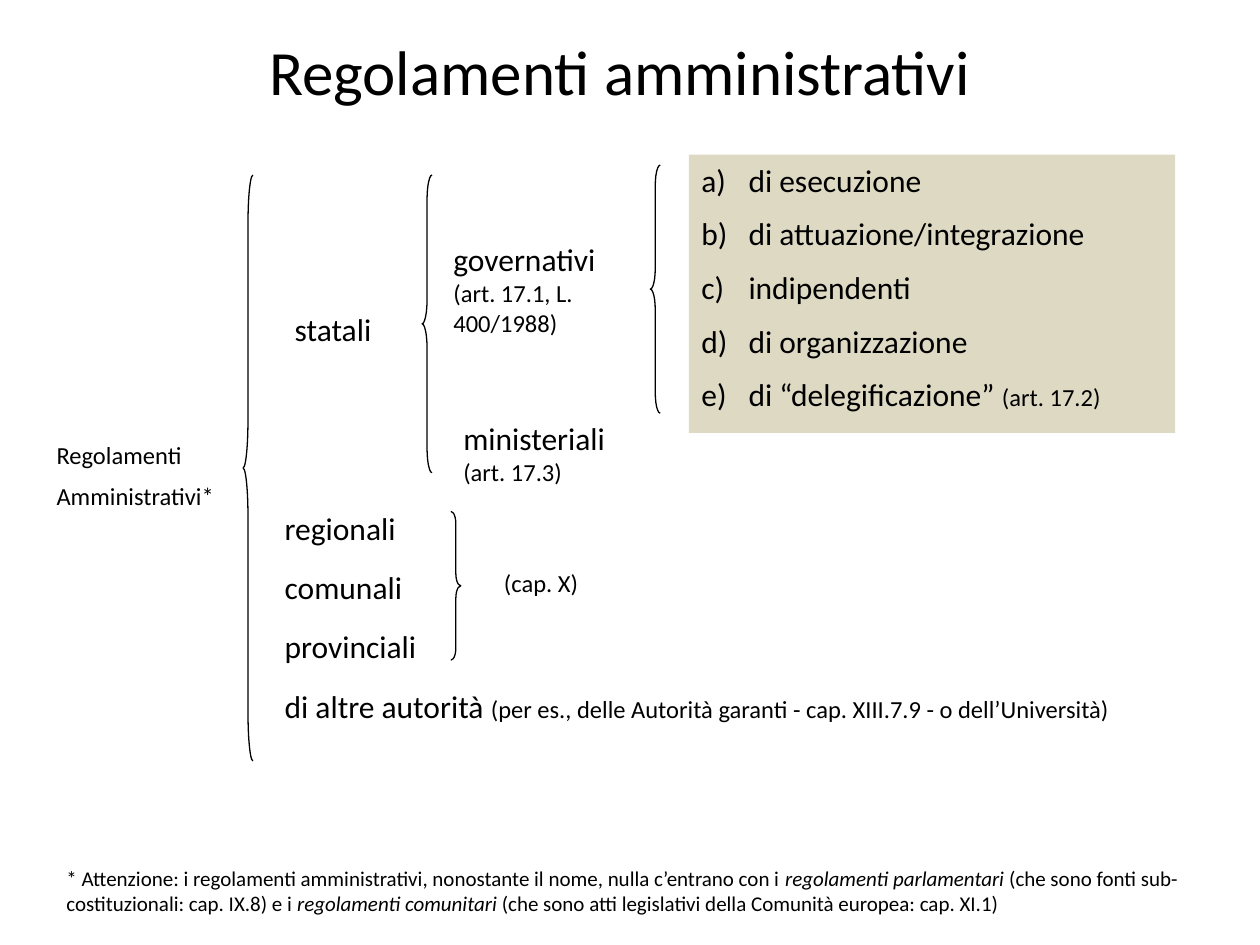
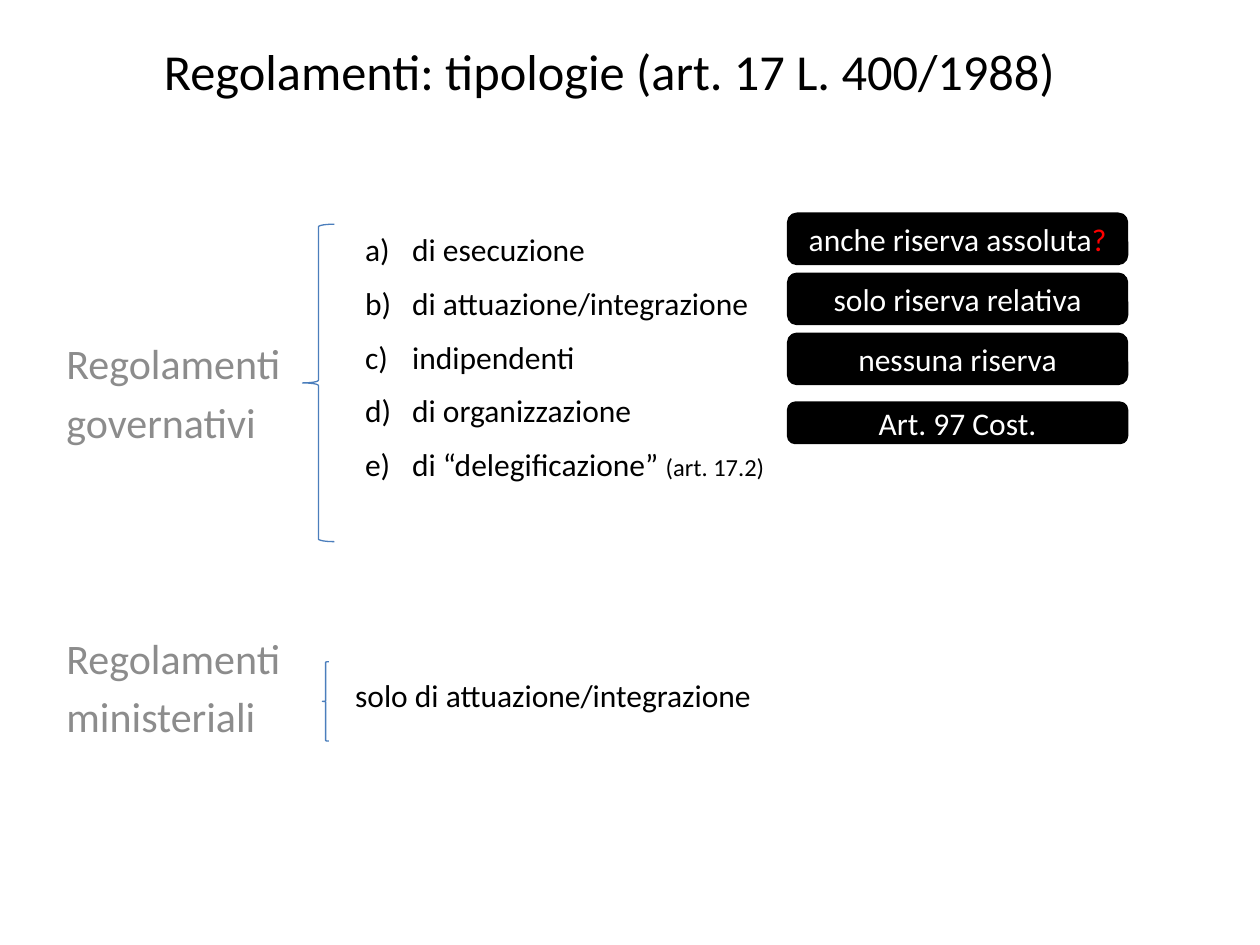
from dataclasses import dataclass
from typing import Optional

from lxml.etree import SubElement
from pptx import Presentation
from pptx.dml.color import RGBColor
from pptx.enum.shapes import MSO_SHAPE as Shape
from pptx.enum.text import MSO_ANCHOR as Anchor, PP_ALIGN as Align
from pptx.oxml.ns import qn
from pptx.util import Cm, Pt

BLACK = RGBColor(0x00, 0x00, 0x00)
WHITE = RGBColor(0xFF, 0xFF, 0xFF)
GREY = RGBColor(0x8C, 0x8C, 0x8C)
RED = RGBColor(0xFF, 0x00, 0x00)
BLUE = RGBColor(0x4B, 0x7E, 0xBC)
SAND = RGBColor(0xDD, 0xD9, 0xC3)
FONT = "Calibri"
LIST_INDENT = Cm(0.95)


@dataclass(frozen=True)
class Box:
    """Position and size in centimetres."""
    left: float
    top: float
    width: float
    height: float

    def lengths(self) -> tuple:
        """Return the four values as lengths."""
        return Cm(self.left), Cm(self.top), Cm(self.width), Cm(self.height)


@dataclass(frozen=True)
class Span:
    """Piece of text that departs from the style of its block."""
    text: str
    size: Optional[float] = None
    color: Optional[RGBColor] = None
    italic: bool = False


@dataclass(frozen=True)
class Block:
    """Text of one box: each paragraph is a tuple of spans."""
    paragraphs: tuple
    size: float = 18
    color: RGBColor = BLACK
    gap: float = 0.5
    align: Align = Align.LEFT
    anchor: Anchor = Anchor.TOP
    lettered: bool = False


@dataclass(frozen=True)
class Brace:
    """Curly brace with its line colour."""
    box: Box
    kind: Shape = Shape.LEFT_BRACE
    color: RGBColor = BLACK
    soft: bool = True


def lines(*texts: str) -> tuple:
    """Turn plain strings into paragraphs of one span."""
    return tuple((Span(text),) for text in texts)


GOVERNMENT_TYPES = Block(
    lines("di esecuzione", "di attuazione/integrazione", "indipendenti", "di organizzazione")
    + ((Span("di “delegificazione” "), Span("(art. 17.2)", 14)),),
    lettered=True,
)


def letter(p) -> None:
    """Number a paragraph with a), b), c) and a hanging indent."""
    p_pr = p._p.get_or_add_pPr()
    p_pr.set("marL", str(LIST_INDENT))
    p_pr.set("indent", str(-LIST_INDENT))
    SubElement(p_pr, qn("a:buFont"), typeface="+mj-lt")
    SubElement(p_pr, qn("a:buAutoNum"), type="alphaLcParenR")


def write(sp, block: Block) -> None:
    """Fill a shape with the text of a block."""
    tf = sp.text_frame
    tf.word_wrap = True
    tf.vertical_anchor = block.anchor
    for i, spans in enumerate(block.paragraphs):
        p = tf.add_paragraph() if i else tf.paragraphs[0]
        p.alignment = block.align
        if i:
            p.space_before = Pt(block.size * block.gap)
        if block.lettered:
            letter(p)
        for span in spans:
            r = p.add_run()
            r.text = span.text
            r.font.name = FONT
            r.font.size = Pt(span.size or block.size)
            r.font.color.rgb = span.color or block.color
            r.font.italic = span.italic


def add_text(s, box: Box, block: Block) -> None:
    """Add a wrapped text box."""
    write(s.shapes.add_textbox(*box.lengths()), block)


def add_panel(s, kind: Shape, box: Box, fill: RGBColor, block: Block,
              line: Optional[RGBColor] = None) -> None:
    """Add a filled shape with text."""
    sp = s.shapes.add_shape(kind, *box.lengths())
    sp.shadow.inherit = False
    sp.fill.solid()
    sp.fill.fore_color.rgb = fill
    if line is None:
        sp.line.fill.background()
    else:
        sp.line.color.rgb = line
        sp.line.width = Pt(2)
    write(sp, block)


def add_brace(s, brace: Brace) -> None:
    """Add a brace; a soft one curves over a twelfth of its height."""
    sp = s.shapes.add_shape(brace.kind, *brace.box.lengths())
    sp.shadow.inherit = False
    sp.fill.background()
    sp.line.color.rgb = brace.color
    sp.line.width = Pt(0.75)
    if brace.soft:
        sp.adjustments[0] = brace.box.height / (12 * brace.box.width)


def add_slide(prs, title: str, left: float, size: float):
    """Add a blank slide with its centred title."""
    s = prs.slides.add_slide(prs.slide_layouts[6])
    add_text(s, Box(left, 0.72, 21.59, 1.4),
             Block(lines(title), size, align=Align.CENTER, anchor=Anchor.MIDDLE))
    return s


def build_overview(prs) -> None:
    """Build the tree of administrative regulations."""
    s = add_slide(prs, "Regolamenti amministrativi", 1.7, 36)
    for brace in (
        Brace(Box(4.9, 3.53, 0.2, 11.81)),
        Brace(Box(8.51, 3.53, 0.2, 6)),
        Brace(Box(9.09, 10.31, 0.2, 3), Shape.RIGHT_BRACE),
        Brace(Box(13.11, 3.33, 0.2, 5)),
    ):
        add_brace(s, brace)

    add_text(s, Box(0.89, 8.74, 4, 1.73), Block(lines("Regolamenti", "Amministrativi*"), 14))
    add_text(s, Box(5.69, 6.12, 2.6, 1.02), Block(lines("statali")))
    other_authorities = (
        Span("di altre autorità "),
        Span("(per es., delle Autorità garanti - cap. XIII.7.9 - o dell’Università)", 14),
    )
    local_bodies = lines("regionali", "comunali", "provinciali") + (other_authorities,)
    for i, spans in enumerate(local_bodies):
        width = 19 if spans is other_authorities else 3.4
        add_text(s, Box(5.49, 10.13 + 1.195 * i, width, 1.02), Block((spans,)))
    add_text(s, Box(9.91, 11.33, 9.6, 0.84), Block(lines("(cap. X)"), 14))
    add_text(s, Box(8.89, 4.72, 3.81, 3.35),
             Block(((Span("governativi "), Span("(art. 17.1, L. 400/1988)", 14)),)))
    add_text(s, Box(9.09, 8.33, 3.61, 1.6),
             Block(((Span("ministeriali "), Span("(art. 17.3)", 14)),)))
    add_panel(s, Shape.RECTANGLE, Box(13.89, 3.12, 9.8, 5.61), SAND, GOVERNMENT_TYPES)

    note = (
        Span("* Attenzione: i regolamenti amministrativi, nonostante il nome, "
             "nulla c’entrano con i "),
        Span("regolamenti parlamentari", italic=True),
        Span(" (che sono fonti sub-costituzionali: cap. IX.8) e i "),
        Span("regolamenti comunitari", italic=True),
        Span(" (che sono atti legislativi della Comunità europea: cap. XI.1)"),
    )
    add_text(s, Box(1.09, 17.32, 23.22, 1.27), Block((note,), 12))


def build_types(prs) -> None:
    """Build the slide on types of regulation and reserves of law."""
    s = add_slide(prs, "Regolamenti: tipologie (art. 17 L. 400/1988)", 1.5, 28.8)
    for top, issuer in ((6.68, "governativi"), (12.62, "ministeriali")):
        add_text(s, Box(1.09, top, 5, 2.7),
                 Block(lines("Regolamenti", issuer), 24, GREY, gap=0.2))
    for box in (Box(6.1, 4.52, 0.64, 6.4), Box(6.5, 13.34, 0.13, 1.6)):
        add_brace(s, Brace(box, color=BLUE, soft=False))
    add_text(s, Box(7.11, 4.52, 8.61, 5.61), GOVERNMENT_TYPES)
    add_text(s, Box(6.91, 13.51, 9.8, 1.02), Block(lines("solo di attuazione/integrazione")))

    reserves = (
        (4.32, 0.99, (Span("anche riserva assoluta"), Span("?", color=RED))),
        (5.53, 0.99, (Span("solo riserva relativa"),)),
        (6.74, 0.99, (Span("nessuna riserva"),)),
        (8.13, 0.79, (Span("Art. 97 Cost."),)),
    )
    for top, height, spans in reserves:
        add_panel(s, Shape.ROUNDED_RECTANGLE, Box(15.9, top, 6.81, height), BLACK,
                  Block((spans,), color=WHITE, align=Align.CENTER, anchor=Anchor.MIDDLE), BLACK)


def main() -> None:
    """Build and save the presentation."""
    prs = Presentation()
    prs.slide_width, prs.slide_height = Cm(25.4), Cm(19.05)
    build_overview(prs)
    build_types(prs)
    prs.save("out.pptx")


if __name__ == "__main__":
    main()
